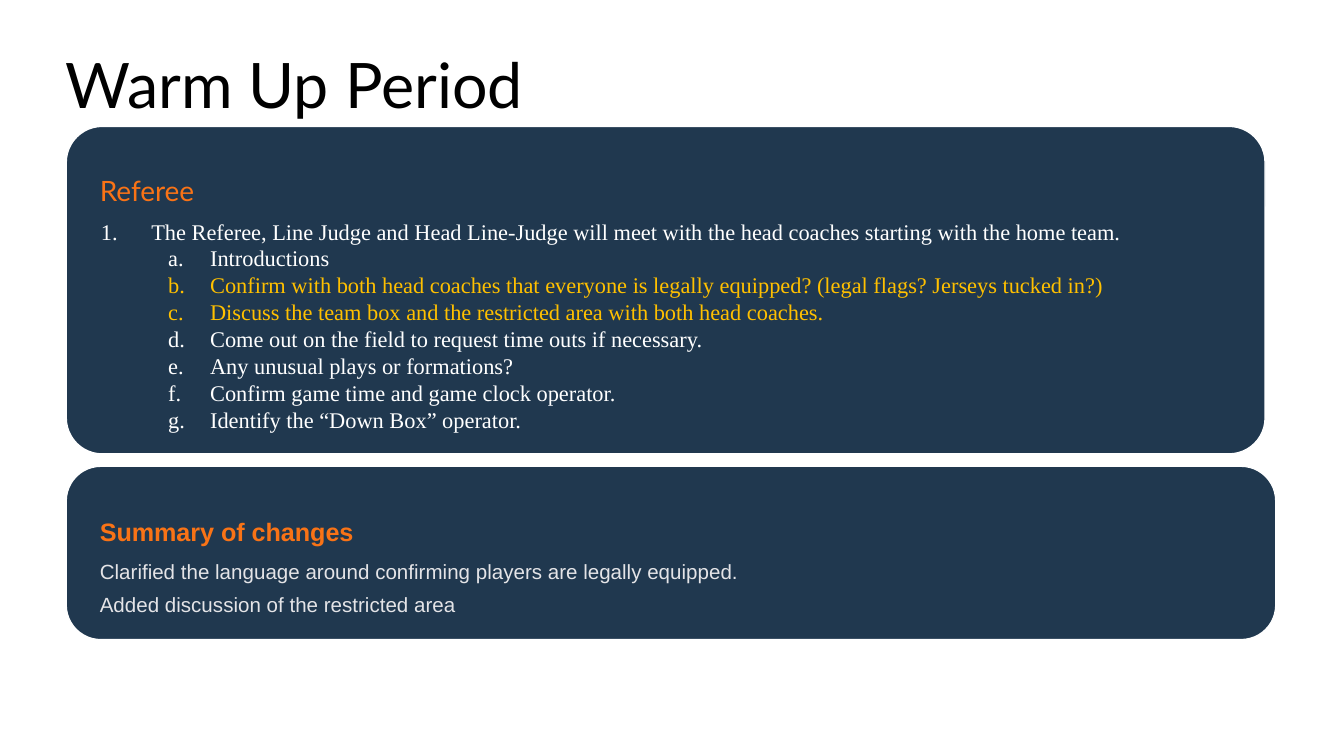
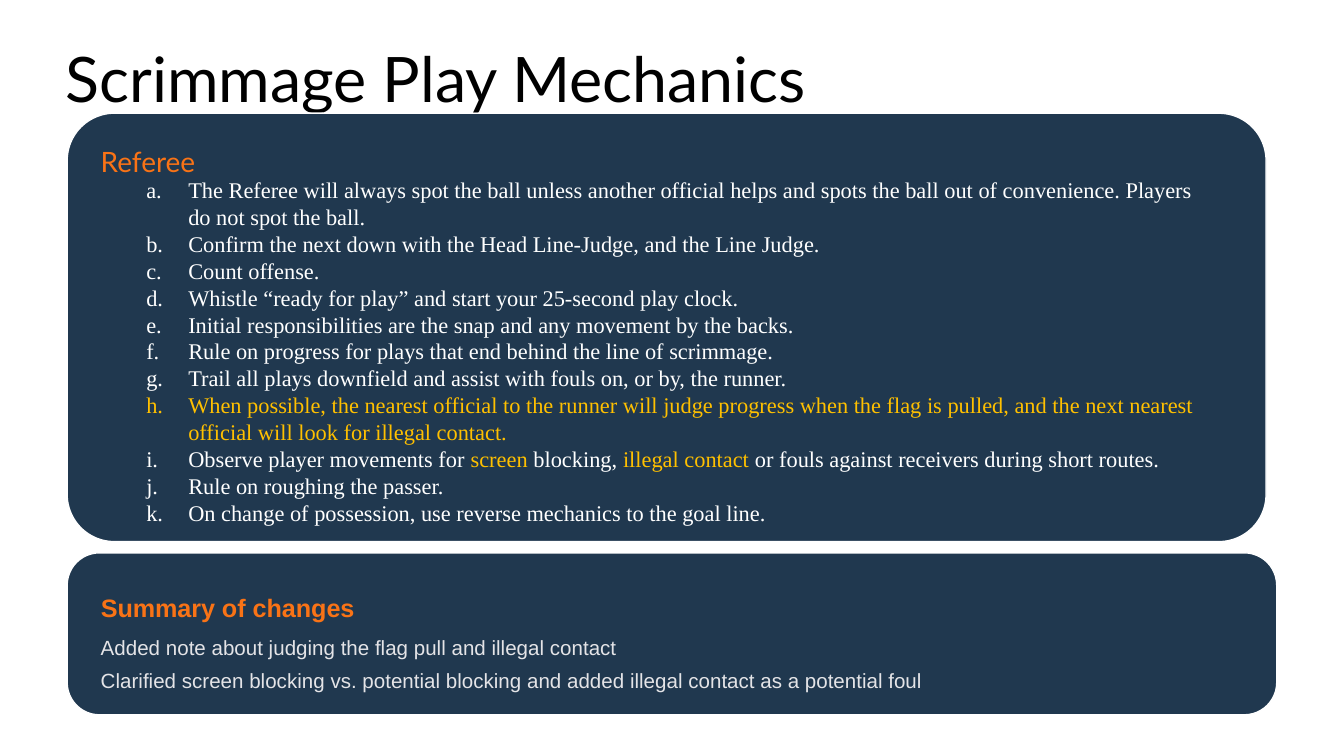
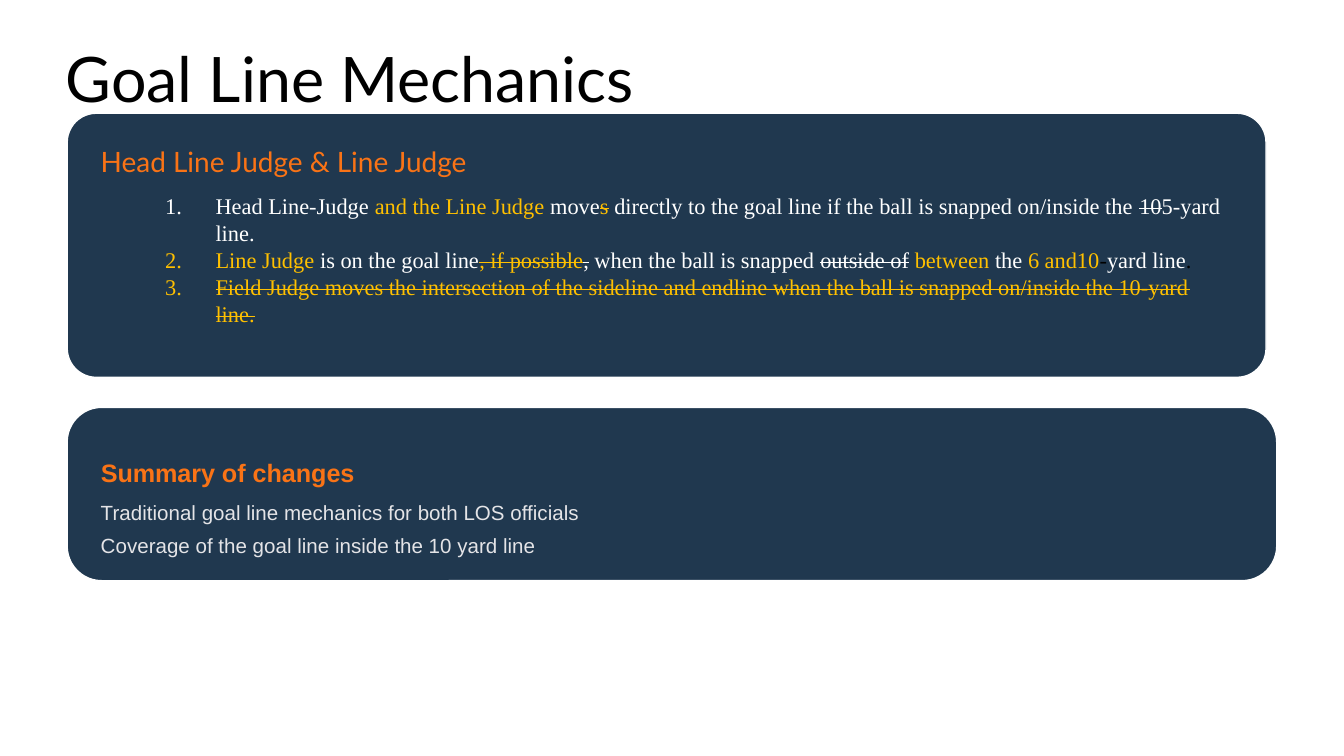
from lxml.etree import SubElement
from pptx import Presentation
from pptx.dml.color import RGBColor
from pptx.enum.shapes import MSO_SHAPE
from pptx.enum.text import MSO_ANCHOR, MSO_AUTO_SIZE, PP_ALIGN
from pptx.oxml.ns import qn
from pptx.util import Pt

INK = {"navy": "0E2841", "white": "FFFFFF", "black": "000000",
       "orange": "F97316", "gold": "FFC000", "gray": "E4E4E7"}
LEFT, INSET = 36, 18
WIDE, FULL = 642.24, 648

# Looks of the runs in a rule
GOLD = {"ink": "gold"}
BLACK = {"ink": "black"}
CUT = {"strike": True}
GONE = {"ink": "gold", "strike": True}


def color(name):
    return RGBColor.from_string(INK[name])


def write(par, text, size=12, font="Times New Roman", ink="white",
          bold=False, strike=False, space=None):
    run = par.add_run()
    run.text = text
    run.font.size = Pt(size)
    run.font.name = font
    run.font.bold = bold
    run.font.color.rgb = color(ink)
    if strike:
        run._r.get_or_add_rPr().set("strike", "sngStrike")
    if space:
        par.line_spacing = space


def frame(shape, margins=(0, 0), fit=MSO_AUTO_SIZE.NONE):
    body = shape.text_frame
    body.word_wrap = True
    body.auto_size = fit
    body.vertical_anchor = MSO_ANCHOR.TOP
    body.margin_left = body.margin_right = Pt(margins[0])
    body.margin_top = body.margin_bottom = Pt(margins[1])
    return body


def add_box(slide, x, y, w, h, **kind):
    return frame(slide.shapes.add_textbox(Pt(x), Pt(y), Pt(w), Pt(h)), **kind)


def number(par, style, ink, left, hang, level):
    """Number a paragraph automatically, with a hanging indent."""
    par.level = level
    props = par._p.get_or_add_pPr()
    props.set("marL", str(Pt(left)))
    props.set("indent", str(-Pt(hang)))
    tint = SubElement(props, qn("a:buClr"))
    SubElement(tint, qn("a:srgbClr")).set("val", INK[ink])
    SubElement(props, qn("a:buAutoNum")).set("type", style)


def add_title(slide, text, top):
    title = slide.shapes.title
    title.left, title.top = Pt(35.3), Pt(top)
    title.width, title.height = Pt(661), Pt(35.3)
    par = frame(title).paragraphs[0]
    par.alignment = PP_ALIGN.LEFT
    write(par, text, size=33.6, font="Lato", ink="black", space=1.05)


def add_card(slide, x, y, w, h, bend):
    card = slide.shapes.add_shape(MSO_SHAPE.ROUNDED_RECTANGLE,
                                  Pt(x), Pt(y), Pt(w), Pt(h))
    card.adjustments[0] = bend
    card.shadow.inherit = False
    card.fill.solid()
    card.fill.fore_color.rgb = color("navy")
    tint = next(card._element.spPr.iter(qn("a:srgbClr")))
    SubElement(tint, qn("a:alpha")).set("val", "92000")
    card.line.color.rgb = color("white")
    card.line.width = Pt(0.75)


def add_rules(slide, x, y, h, role, drop, rules, shift, width):
    """Card with a role and its numbered rules, shifted from the corner."""
    add_card(slide, x, y, WIDE, h, 0.11)
    head = add_box(slide, x + INSET, y + drop, 288, 21)
    write(head.paragraphs[0], role, size=15, font="Lato", ink="orange",
          space=1.4)
    dx, dy = shift
    body = add_box(slide, x + dx, y + dy, width, h - dy, margins=(7.2, 3.6),
                   fit=MSO_AUTO_SIZE.SHAPE_TO_FIT_TEXT)
    for i, (level, ink, runs) in enumerate(rules):
        par = body.add_paragraph() if i else body.paragraphs[0]
        if level:
            number(par, "alphaLcPeriod", ink, 58.5, 22.5, level)
        else:
            number(par, "arabicPeriod", ink, 27, 27, level)
        for text, look in runs:
            write(par, text, **look)


def add_summary(slide, x, y, h, drop, lines):
    """Card with the summary of changes."""
    add_card(slide, x, y, FULL, h, 0.2)
    head = add_box(slide, x + INSET, y + drop, 624, 21)
    write(head.paragraphs[0], "Summary of changes", size=13.5, font="Arial",
          ink="orange", bold=True, space=1.56)
    body = add_box(slide, x + INSET, y + drop + 27, 612, 29.5)
    for i, line in enumerate(lines):
        par = body.add_paragraph() if i else body.paragraphs[0]
        write(par, line, size=11, font="Arial", ink="gray", space=1.35)


def plain(text, level=1, ink="white"):
    return level, ink, [(text, {"ink": ink})]


def warm_up(slide):
    add_title(slide, "Warm Up Period", 22.3)
    rules = [
        plain("The Referee, Line Judge and Head Line-Judge will meet with the "
              "head coaches starting with the home team.", level=0),
        plain("Introductions"),
        plain("Confirm with both head coaches that everyone is legally "
              "equipped? (legal flags? Jerseys tucked in?)", ink="gold"),
        plain("Discuss the team box and the restricted area with both head "
              "coaches.", ink="gold"),
        plain("Come out on the field to request time outs if necessary."),
        plain("Any unusual plays or formations?"),
        plain("Confirm game time and game clock operator."),
        plain("Identify the “Down Box” operator."),
    ]
    x = LEFT - 0.5
    add_rules(slide, x, 67.7, 175.5, "Referee", 18, rules, (11.5, 45.4), 612)
    add_summary(slide, x, 249.8, 92.9, 18, [
        "Clarified the language around confirming players are legally "
        "equipped.",
        "Added discussion of the restricted area"])


def scrimmage(slide):
    add_title(slide, "Scrimmage Play Mechanics", 19.4)
    rules = [
        plain("The Referee will always spot the ball unless another official "
              "helps and spots the ball out of convenience. "
              "Players do not spot the ball."),
        plain("Confirm the next down with the Head Line-Judge, and the Line "
              "Judge."),
        plain("Count offense."),
        plain("Whistle “ready for play” and start your 25-second play clock."),
        plain("Initial responsibilities are the snap and any movement by the "
              "backs."),
        plain("Rule on progress for plays that end behind the line of "
              "scrimmage."),
        plain("Trail all plays downfield and assist with fouls on, or by, the "
              "runner."),
        plain("When possible, the nearest official to the runner will judge "
              "progress when the flag is pulled, and the next nearest "
              "official will look for illegal contact.", ink="gold"),
        (1, "white", [
            ("Observe player movements for ", {}), ("screen ", GOLD),
            ("blocking, ", {}), ("illegal contact ", GOLD),
            ("or fouls against receivers during short routes.", {})]),
        plain("Rule on roughing the passer."),
        plain("On change of possession, use reverse mechanics to the goal "
              "line."),
    ]
    add_rules(slide, LEFT, 60.7, 229.5, "Referee", 9.4, rules,
              (-0.7, 30.2), 612)
    add_summary(slide, LEFT, 296.2, 86.8, 12.2, [
        "Added note about judging the flag pull and illegal contact",
        "Clarified screen blocking vs. potential blocking and added illegal "
        "contact as a potential foul"])


def goal_line(slide):
    add_title(slide, "Goal Line Mechanics", 19.4)
    rules = [
        (0, "white", [
            ("Head Line-Judge ", {}), ("and the Line Judge ", GOLD),
            ("move", {}), ("s", GONE), (" ", BLACK),
            ("directly to the goal line if the ball is snapped on/inside "
             "the ", {}),
            ("10", CUT), ("5-yard line.", {})]),
        (0, "gold", [
            ("Line Judge ", GOLD), ("is on the goal line", {}),
            (", if possible", GONE), (",", CUT),
            (" when the ball is snapped ", {}), ("outside of", CUT),
            (" ", {}), ("between ", GOLD), ("the ", {}), ("6 and10", GOLD),
            ("-", BLACK), ("yard line", {}), (".", BLACK)]),
        (0, "gold", [
            ("Field Judge moves the intersection of the sideline and endline "
             "when the ball is snapped on/inside the 10-yard line.", GONE)]),
    ]
    add_rules(slide, LEFT, 60.7, 141.5, "Head Line Judge & Line Judge", 9.4,
              rules, (45.4, 38.7), 584)
    add_summary(slide, LEFT, 218.2, 92.9, 18, [
        "Traditional goal line mechanics for both LOS officials",
        "Coverage of the goal line inside the 10 yard line"])


def main():
    deck = Presentation()
    deck.slide_width, deck.slide_height = Pt(720), Pt(405)
    for build in (warm_up, scrimmage, goal_line):
        build(deck.slides.add_slide(deck.slide_layouts[5]))
    deck.save("out.pptx")


if __name__ == "__main__":
    main()
